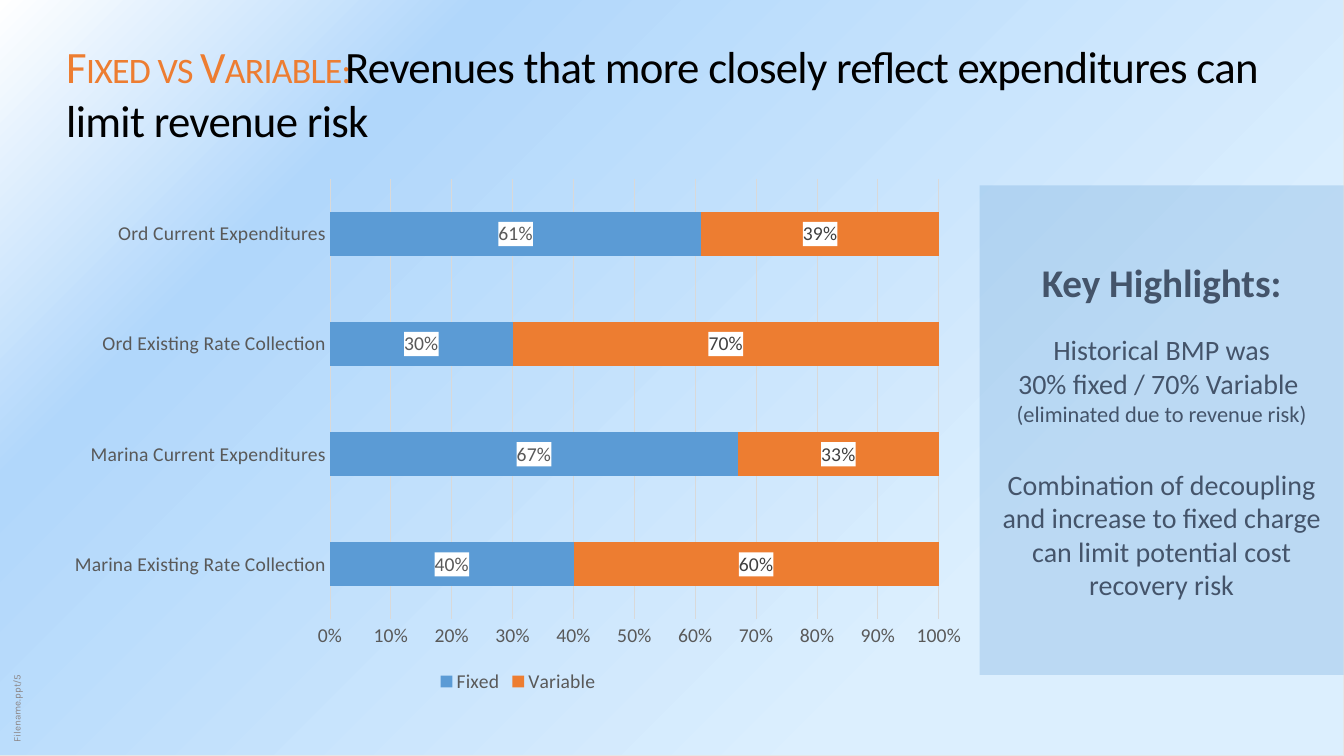
from dataclasses import dataclass

from lxml import etree
from pptx import Presentation
from pptx.chart.data import CategoryChartData
from pptx.dml.color import RGBColor
from pptx.enum.chart import XL_CHART_TYPE, XL_LABEL_POSITION, XL_LEGEND_POSITION, XL_TICK_MARK
from pptx.enum.shapes import MSO_SHAPE
from pptx.enum.text import MSO_ANCHOR, PP_ALIGN
from pptx.oxml import parse_xml
from pptx.oxml.ns import nsdecls, qn
from pptx.util import Cm, Pt

RECTANGLE = MSO_SHAPE.RECTANGLE
STACKED = XL_CHART_TYPE.BAR_STACKED_100
LABEL_CENTER = XL_LABEL_POSITION.CENTER
LEGEND_BOTTOM = XL_LEGEND_POSITION.BOTTOM
NO_TICK = XL_TICK_MARK.NONE
TOP, MIDDLE, BOTTOM = MSO_ANCHOR.TOP, MSO_ANCHOR.MIDDLE, MSO_ANCHOR.BOTTOM
LEFT, CENTER = PP_ALIGN.LEFT, PP_ALIGN.CENTER

BLUE, ORANGE, SLATE, GREY, PALE = "5B9BD5", "ED7D31", "44546A", "595959", "D9D9D9"
BACKGROUND_STOPS = ((25, "DCEFFE"), (77, "B1D7FB"), (100, "FFFFFF"))


@dataclass(frozen=True)
class Span:
    text: str
    size: float
    color: str
    bold: bool = False
    font: str = "Calibri"
    small_caps: bool = False
    spacing: int = 0
    new_line: bool = False


@dataclass(frozen=True)
class Para:
    spans: tuple[Span, ...]
    before: float = 0


@dataclass(frozen=True)
class RateSeries:
    name: str
    values: tuple[float, ...]
    color: str
    label_color: str


TITLE = (Para((
    Span("Fixed vs Variable: ", 32, ORANGE, small_caps=True, spacing=-50),
    Span("Revenues that more closely reflect expenditures can limit revenue risk",
         32, "000000", spacing=-50),
)),)
HIGHLIGHTS = (
    Para((Span("Key Highlights:", 28, SLATE, bold=True),)),
    Para((Span("Historical BMP was", 20, SLATE),), before=19),
    Para((Span("30% fixed / 70% Variable ", 20, SLATE),
          Span("(eliminated due to revenue risk)", 16, SLATE, new_line=True))),
    Para((Span("Combination of decoupling and increase to fixed charge "
               "can limit potential cost recovery risk", 20, SLATE),), before=29),
)
FOOTER = (Para((Span("Filename.ppt/5", 7, "8B8585", font="Karla"),)),)
CATEGORIES = ("Marina Existing Rate Collection", "Marina Current Expenditures",
              "Ord Existing Rate Collection", "Ord Current Expenditures")
SERIES = (
    RateSeries("Fixed", (0.4, 0.67, 0.3, 0.61), BLUE, GREY),
    RateSeries("Variable", (0.6, 0.33, 0.7, 0.39), ORANGE, "404040"),
)


def rgb(value: str) -> RGBColor:
    return RGBColor.from_string(value)


def apply(target, values: dict) -> None:
    for name, value in values.items():
        setattr(target, name, value)


def style_font(font, size: float, color: str, name: str = "Calibri", bold: bool = False) -> None:
    apply(font, {"size": Pt(size), "name": name, "bold": bold})
    font.color.rgb = rgb(color)


def write(frame, paras: tuple[Para, ...], anchor, align, margin: float | None = None) -> None:
    apply(frame, {"word_wrap": True, "vertical_anchor": anchor})
    if margin is not None:
        sides = ("left", "top", "right", "bottom")
        apply(frame, {f"margin_{side}": Cm(margin) for side in sides})
    for index, item in enumerate(paras):
        para = frame.add_paragraph() if index else frame.paragraphs[0]
        para.alignment = align
        if item.before:
            para.space_before = Pt(item.before)
        for span in item.spans:
            if span.new_line:
                para.add_line_break()
            run = para.add_run()
            run.text = span.text
            style_font(run.font, span.size, span.color, span.font, span.bold)
            properties = run.font._element
            if span.spacing:
                properties.set("spc", str(span.spacing))
            if span.small_caps:
                properties.set("cap", "small")


def add_text(page, frame: tuple, paras: tuple[Para, ...], anchor, margin=None, rotation=0) -> None:
    box = page.shapes.add_textbox(*map(Cm, frame))
    box.rotation = rotation
    write(box.text_frame, paras, anchor, LEFT, margin)


def add_background(page, width: int, height: int) -> None:
    backdrop = page.shapes.add_shape(RECTANGLE, 0, 0, width, height)
    backdrop.shadow.inherit = False
    stops = "".join(f'<a:gs pos="{place * 1000}"><a:srgbClr val="{color}"/></a:gs>'
                    for place, color in BACKGROUND_STOPS)
    gradient = parse_xml(
        f'<a:gradFill {nsdecls("a")} rotWithShape="1"><a:gsLst>{stops}</a:gsLst>'
        '<a:path path="circle"><a:fillToRect l="100000" t="100000"/></a:path></a:gradFill>')
    backdrop._element.spPr.find(qn("a:prstGeom")).addnext(gradient)
    backdrop.line.color.rgb = rgb("E7E6E6")
    backdrop.line.width = Pt(0.75)


def add_highlights(page) -> None:
    panel = page.shapes.add_shape(RECTANGLE, Cm(24.69), Cm(4.67), Cm(9.17), Cm(12.34))
    panel.shadow.inherit = False
    panel.fill.solid()
    panel.fill.fore_color.rgb = rgb(BLUE)
    color = panel._element.spPr.find(qn("a:solidFill")).find(qn("a:srgbClr"))
    etree.SubElement(color, qn("a:alpha")).set("val", "25000")
    panel.line.fill.background()
    write(panel.text_frame, HIGHLIGHTS, MIDDLE, CENTER)


def style_series(series, item: RateSeries) -> None:
    series.format.fill.solid()
    series.format.fill.fore_color.rgb = rgb(item.color)
    labels = series.data_labels
    apply(labels, {"show_value": True, "position": LABEL_CENTER,
                   "number_format": "0%", "number_format_is_linked": False})
    style_font(labels.font, 14, item.label_color)
    white = parse_xml(f'<c:spPr {nsdecls("c", "a")}><a:solidFill><a:srgbClr val="FFFFFF"/>'
                      '</a:solidFill><a:ln><a:noFill/></a:ln></c:spPr>')
    labels._element.find(qn("c:txPr")).addprevious(white)


def add_rate_chart(page) -> None:
    data = CategoryChartData(number_format="0%")
    data.categories = CATEGORIES
    for item in SERIES:
        data.add_series(item.name, item.values)
    chart = page.shapes.add_chart(STACKED, Cm(1.42), Cm(4.24), Cm(23.27), Cm(13.34), data).chart
    apply(chart, {"has_title": False, "has_legend": True})
    style_font(chart.font, 14, "000000")
    apply(chart.legend, {"position": LEGEND_BOTTOM, "include_in_layout": False})
    style_font(chart.legend.font, 14, GREY)
    plot = chart.plots[0]
    apply(plot, {"gap_width": 150, "overlap": 100, "vary_by_categories": False})
    for series, item in zip(plot.series, SERIES):
        style_series(series, item)
    names, shares = chart.category_axis, chart.value_axis
    for axis in (names, shares):
        apply(axis, {"major_tick_mark": NO_TICK, "minor_tick_mark": NO_TICK})
        style_font(axis.tick_labels.font, 14, GREY)
    apply(names, {"has_major_gridlines": False})
    apply(shares, {"has_major_gridlines": True, "minimum_scale": 0, "maximum_scale": 1,
                   "major_unit": 0.1})
    apply(shares.tick_labels, {"number_format": "0%", "number_format_is_linked": False})
    shares.format.line.fill.background()
    for line in (names.format.line, shares.major_gridlines.format.line):
        line.color.rgb = rgb(PALE)
        line.width = Pt(0.75)


def main() -> None:
    deck = Presentation()
    apply(deck, {"slide_width": Cm(33.87), "slide_height": Cm(19.05)})
    page = deck.slides.add_slide(deck.slide_layouts[6])
    add_background(page, deck.slide_width, deck.slide_height)
    add_text(page, (-2.97, 15.16, 6.78, 0.56), FOOTER, BOTTOM, margin=0.13, rotation=270)
    add_text(page, (1.42, 0.84, 31.04, 2.97), TITLE, MIDDLE)
    add_highlights(page)
    add_rate_chart(page)
    deck.save("out.pptx")


if __name__ == "__main__":
    main()
